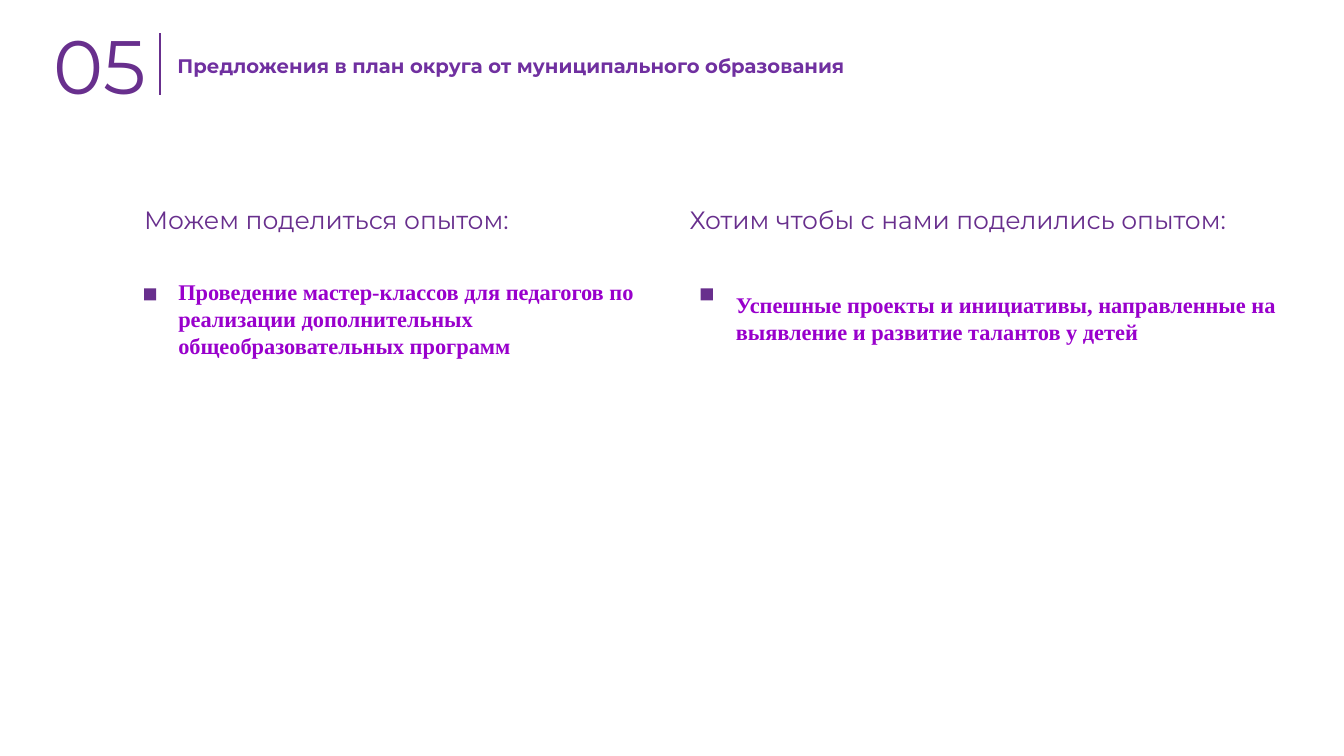
"""Builds the slide of proposals from the municipality to the district plan."""
from dataclasses import dataclass

from lxml.etree import SubElement
from pptx import Presentation
from pptx.dml.color import RGBColor
from pptx.enum.shapes import MSO_CONNECTOR as Connector, MSO_SHAPE as Shape
from pptx.enum.text import MSO_ANCHOR as Anchor, MSO_AUTO_SIZE as AutoSize, PP_ALIGN as Align
from pptx.oxml.ns import qn
from pptx.util import Inches, Pt

PURPLE = RGBColor(0x68, 0x2F, 0x8D)
TITLE_PURPLE = RGBColor(0x70, 0x30, 0xA0)
VIOLET = RGBColor(0x99, 0x00, 0xCC)
TIGHT = (0, 0.01, 0, 0)
PADDED = (0.1, 0.05, 0.1, 0.05)
MARKER_TOP, MARKER_SIZE = 2.86, 0.12
HEADING_TOP, HEADING_HEIGHT = 2.02, 0.31


@dataclass(frozen=True)
class Style:
    font: str
    size: float
    color: RGBColor
    bold: bool
    insets: tuple[float, float, float, float]


@dataclass(frozen=True)
class Box:
    left: float
    top: float
    width: float
    height: float

    def lengths(self) -> tuple:
        return tuple(Inches(n) for n in (self.left, self.top, self.width, self.height))


@dataclass(frozen=True)
class Column:
    heading: str
    heading_left: float
    heading_width: float
    marker_left: float
    proposal: str
    proposal_box: Box


NUMBER = Style("Montserrat", 54, PURPLE, False, TIGHT)
TITLE = Style("Montserrat", 14, TITLE_PURPLE, True, TIGHT)
HEADING = Style("Montserrat", 17.9, PURPLE, False, TIGHT)
PROPOSAL = Style("Times New Roman", 16, VIOLET, True, PADDED)

COLUMNS = (
    Column("Можем поделиться опытом:", 1.43, 4.12, 1.43,
           "Проведение мастер-классов для педагогов по реализации дополнительных "
           "общеобразовательных программ", Box(1.67, 2.71, 5, 0.91)),
    Column("Хотим чтобы с нами поделились опытом:", 6.84, 5.89, 6.95,
           "Успешные проекты и инициативы, направленные на выявление и развитие "
           "талантов у детей", Box(7.2, 2.84, 5.73, 0.64)),
)


def set_all(target, values: dict) -> None:
    for name, value in values.items():
        setattr(target, name, value)


def write(holder, box: Box, text: str, style: Style) -> None:
    set_all(holder, dict(zip(("left", "top", "width", "height"), box.lengths())))
    frame = holder.text_frame
    sides = ("margin_left", "margin_top", "margin_right", "margin_bottom")
    set_all(frame, {
        "text": text, "word_wrap": True, "auto_size": AutoSize.NONE,
        "vertical_anchor": Anchor.TOP,
        **{side: Inches(inset) for side, inset in zip(sides, style.insets)},
    })
    paragraph = frame.paragraphs[0]
    paragraph.alignment = Align.LEFT
    font = paragraph.runs[0].font
    set_all(font, {"name": style.font, "size": Pt(style.size), "bold": style.bold})
    font.color.rgb = style.color


def add_text(slide, box: Box, text: str, style: Style) -> None:
    write(slide.shapes.add_textbox(*box.lengths()), box, text, style)


def add_divider(slide, x: float, top: float, bottom: float) -> None:
    divider = slide.shapes.add_connector(
        Connector.STRAIGHT, Inches(x), Inches(top), Inches(x), Inches(bottom))
    divider.line.color.rgb = PURPLE
    divider.line.width = Pt(1.42)
    SubElement(divider._element.spPr, qn("a:effectLst"))


def add_column(slide, column: Column) -> None:
    marker_box = Box(column.marker_left, MARKER_TOP, MARKER_SIZE, MARKER_SIZE)
    marker = slide.shapes.add_shape(Shape.RECTANGLE, *marker_box.lengths())
    marker.shadow.inherit = False
    marker.fill.solid()
    marker.fill.fore_color.rgb = PURPLE
    marker.line.fill.background()
    heading_box = Box(column.heading_left, HEADING_TOP, column.heading_width, HEADING_HEIGHT)
    add_text(slide, heading_box, column.heading, HEADING)
    add_text(slide, column.proposal_box, column.proposal, PROPOSAL)


def main() -> None:
    deck = Presentation()
    set_all(deck, {"slide_width": Inches(13.33), "slide_height": Inches(7.5)})
    slide = deck.slides.add_slide(deck.slide_layouts[5])
    write(slide.shapes.title, Box(1.76, 0.52, 8.67, 0.24),
          "Предложения в план округа от муниципального образования", TITLE)
    add_text(slide, Box(0.53, 0.18, 1.03, 0.92), "05", NUMBER)
    add_divider(slide, 1.59, 0.33, 0.94)
    for column in COLUMNS:
        add_column(slide, column)
    deck.save("out.pptx")


if __name__ == "__main__":
    main()
